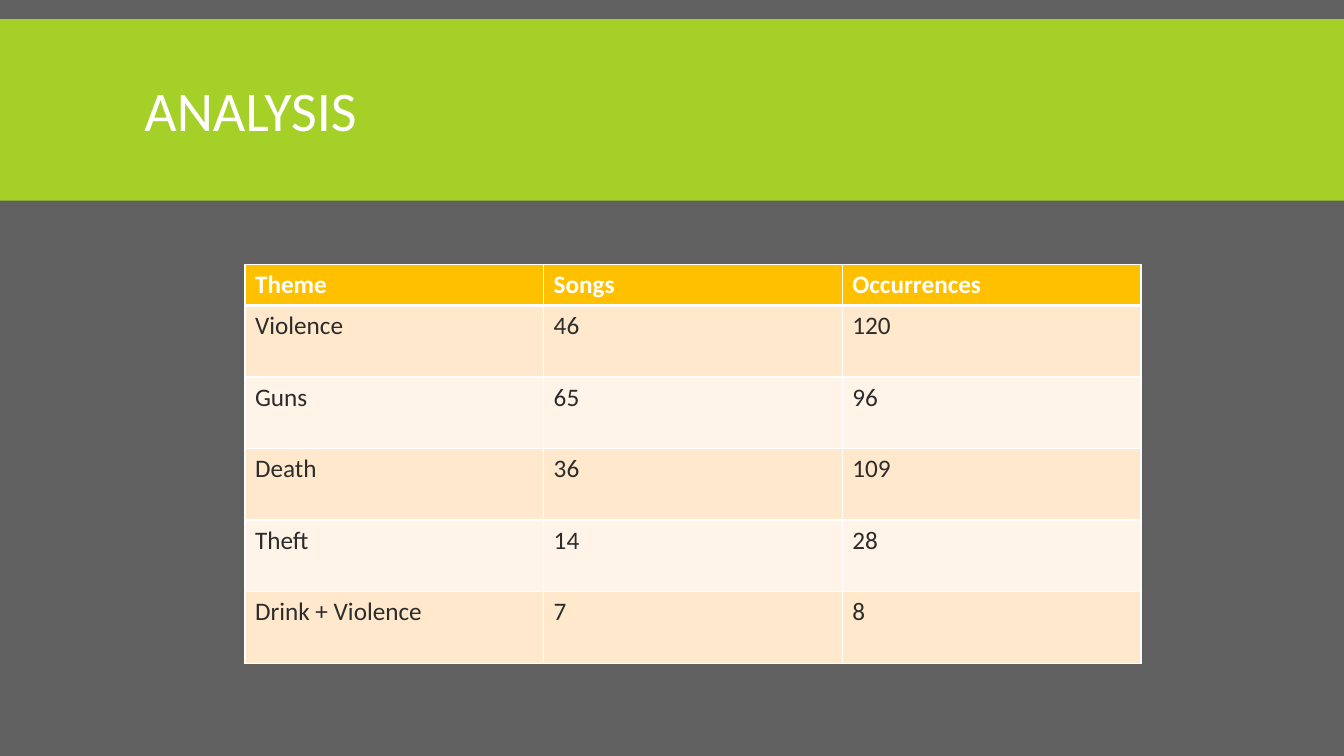
import dataclasses

import lxml.etree
import pptx
import pptx.dml.color
import pptx.enum.shapes
import pptx.enum.text
import pptx.oxml.ns
import pptx.util


@dataclasses.dataclass(frozen=True)
class Theme:
    back: str = "606060"
    band: str = "A5D028"
    head: str = "FFC000"
    rows: tuple = ("FFE8CC", "FFF4E7")
    light: str = "FFFFFF"
    dark: str = "2C2C2C"
    font: str = "Calibri"
    title: int = 40
    body: int = 18
    thin: int = 1
    thick: int = 3


THEME = Theme()
WIDE, HIGH = 13.33, 7.5
DATA = [
    ("Theme", "Songs", "Occurrences"),
    ("Violence", "46", "120"),
    ("Guns", "65", "96"),
    ("Death", "36", "109"),
    ("Theft", "14", "28"),
    ("Drink + Violence", "7", "8"),
]


def color(code):
    return pptx.dml.color.RGBColor.from_string(code)


def paint(fill, code):
    fill.solid()
    fill.fore_color.rgb = color(code)


def write(frame, text, size=THEME.body, ink=THEME.dark, bold=False, space=None):
    para = frame.paragraphs[0]
    para.alignment = pptx.enum.text.PP_ALIGN.LEFT
    para.line_spacing = space
    run = para.add_run()
    run.text = text
    font = run.font
    font.name, font.size, font.bold = THEME.font, pptx.util.Pt(size), bold
    font.color.rgb = color(ink)


def border(cell, **sides):
    """Draw cell edges; sides are L, R, T and B, in points."""
    props = cell._tc.get_or_add_tcPr()
    tag = pptx.oxml.ns.qn
    for spot, (side, width) in enumerate(sides.items()):
        line = lxml.etree.Element(tag("a:ln" + side), w=str(pptx.util.Pt(width)))
        fill = lxml.etree.SubElement(line, tag("a:solidFill"))
        lxml.etree.SubElement(fill, tag("a:srgbClr"), val=THEME.light)
        props.insert(spot, line)


def header(slide, box, text):
    """Full-width band with the title on it."""
    left, top, width, height = box
    inch = pptx.util.Inches
    band = slide.shapes.add_shape(
        pptx.enum.shapes.MSO_SHAPE.RECTANGLE, *map(inch, box))
    band.shadow.inherit = False
    paint(band.fill, THEME.band)
    band.line.fill.background()

    title = slide.shapes.title
    title.left, title.top = inch(left + 0.1 * width), inch(top + 0.12)
    title.width, title.height = inch(0.8 * width), inch(height - 0.15)
    frame = title.text_frame
    frame.word_wrap = True
    frame.auto_size = pptx.enum.text.MSO_AUTO_SIZE.NONE
    frame.vertical_anchor = pptx.enum.text.MSO_ANCHOR.MIDDLE
    write(frame, text, size=THEME.title, ink=THEME.light, space=0.85)
    # Bring the title in front of the band
    band._element.addnext(title._element)


def grid(slide, box, data, first):
    """Table of equal columns under a header row of height first."""
    width, height = box[2:]
    inch = pptx.util.Inches
    table = slide.shapes.add_table(
        len(data), len(data[0]), *map(inch, box)).table
    for col in table.columns:
        col.width = inch(width / len(data[0]))
    for num, row in enumerate(table.rows):
        row.height = inch((height - first) / (len(data) - 1) if num else first)

    for num, line in enumerate(data):
        head = num == 0
        for col, text in enumerate(line):
            cell = table.cell(num, col)
            paint(cell.fill, THEME.head if head else THEME.rows[(num - 1) % 2])
            write(cell.text_frame, text, bold=head,
                  ink=THEME.light if head else THEME.dark)
            border(cell, L=THEME.thin, R=THEME.thin,
                   T=THEME.thick if num == 1 else THEME.thin,
                   B=THEME.thick if head else THEME.thin)


def main():
    deck = pptx.Presentation()
    deck.slide_width = pptx.util.Inches(WIDE)
    deck.slide_height = pptx.util.Inches(HIGH)
    slide = deck.slides.add_slide(deck.slide_layouts[5])
    paint(slide.background.fill, THEME.back)
    header(slide, (0, 0.19, WIDE, 1.8), "ANALYSIS")
    grid(slide, (2.43, 2.62, WIDE * 2 / 3, 3.96), DATA, first=0.41)
    deck.save("out.pptx")


if __name__ == "__main__":
    main()
